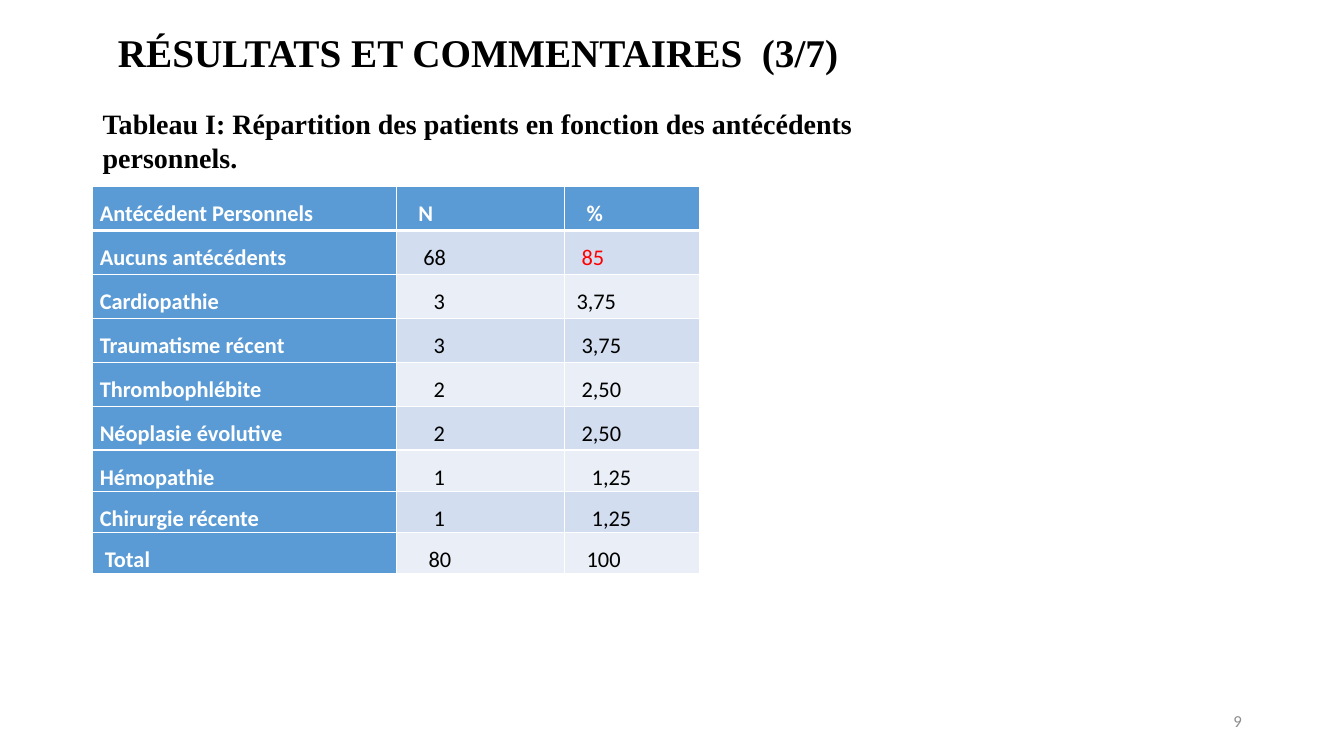
from dataclasses import dataclass

from lxml.etree import SubElement
from pptx import Presentation
from pptx.dml.color import RGBColor
from pptx.enum.text import MSO_ANCHOR as Anchor, MSO_AUTO_SIZE as AutoSize, PP_ALIGN as Align
from pptx.oxml.ns import qn
from pptx.util import Pt

WHITE, BLACK, RED, GREY = "FFFFFF", "000000", "FF0000", "8C8C8C"
BLUE, BAND_DARK, BAND_LIGHT = "5B9BD5", "D2DEEF", "EAEFF7"
SERIF, SANS = "Times New Roman", "Calibri"
INSET, INDENT_STEP = 5.04, 3.62
COLUMN_WIDTHS = (216.72, 120.24, 96.48)
TALL_ROW, SHORT_ROW, TALL_COUNT = 31.4, 26.64, 6


@dataclass(frozen=True)
class Entry:
    text: str
    indent: int = 0
    color: str = BLACK


@dataclass(frozen=True)
class Style:
    size: float
    font: str
    color: str
    bold: bool = False


ROWS = (
    (Entry("Antécédent Personnels"), Entry("N", 3), Entry("%", 3)),
    (Entry("Aucuns antécédents"), Entry("68", 4), Entry("85", 2, RED)),
    (Entry("Cardiopathie"), Entry("3", 6), Entry("3,75", 1)),
    (Entry("Traumatisme récent"), Entry("3", 6), Entry("3,75", 2)),
    (Entry("Thrombophlébite"), Entry("2", 6), Entry("2,50", 2)),
    (Entry("Néoplasie évolutive"), Entry("2", 6), Entry("2,50", 2)),
    (Entry("Hémopathie"), Entry("1", 6), Entry("1,25", 4)),
    (Entry("Chirurgie récente"), Entry("1", 6), Entry("1,25", 4)),
    (Entry("Total", 1), Entry("80", 5), Entry("100", 3)),
)


def rgb(value: str) -> RGBColor:
    return RGBColor.from_string(value)


def write(frame, text: str, style: Style):
    frame.text = text
    paragraph = frame.paragraphs[0]
    font = paragraph.font
    font.size, font.name, font.bold = Pt(style.size), style.font, style.bold
    font.color.rgb = rgb(style.color)
    return paragraph


def add_label(slide, box: tuple, text: str, style: Style, align: Align, anchor: Anchor) -> None:
    frame = slide.shapes.add_textbox(*map(Pt, box)).text_frame
    frame.word_wrap = True
    frame.vertical_anchor = anchor
    write(frame, text, style).alignment = align


def add_borders(cell, widths: dict) -> None:
    properties = cell._tc.get_or_add_tcPr()
    for position, (side, width) in enumerate(widths.items()):
        line = SubElement(properties, qn(f"a:ln{side}"), w=str(Pt(width)))
        SubElement(SubElement(line, qn("a:solidFill")), qn("a:srgbClr"), val=WHITE)
        properties.insert(position, line)


def fill_cell(cell, entry: Entry, row: int, column: int) -> None:
    heading = row == 0 or column == 0
    cell.margin_left = Pt(INSET + entry.indent * INDENT_STEP)
    cell.margin_right = Pt(INSET)
    cell.margin_top = cell.margin_bottom = 0
    cell.fill.solid()
    cell.fill.fore_color.rgb = rgb(BLUE if heading else BAND_DARK if row % 2 else BAND_LIGHT)
    style = Style(16, SANS, WHITE if heading else entry.color, heading)
    paragraph = write(cell.text_frame, entry.text, style)
    paragraph.line_spacing = 1.5
    tall = row < TALL_COUNT
    paragraph.space_before, paragraph.space_after = Pt(0 if tall else 6), Pt(8 if tall else 16)
    add_borders(cell, {"L": 1, "R": 1, "T": 3 if row == 1 else 1, "B": 3 if row == 0 else 1})


def add_history_table(slide) -> None:
    heights = [TALL_ROW if row < TALL_COUNT else SHORT_ROW for row in range(len(ROWS))]
    table = slide.shapes.add_table(
        len(ROWS), len(COLUMN_WIDTHS), Pt(66.24), Pt(133.2), Pt(sum(COLUMN_WIDTHS)), Pt(sum(heights))
    ).table
    table.first_col = True
    for column, width in zip(table.columns, COLUMN_WIDTHS):
        column.width = Pt(width)
    for row, (height, entries) in enumerate(zip(heights, ROWS)):
        table.rows[row].height = Pt(height)
        for column, entry in enumerate(entries):
            fill_cell(table.cell(row, column), entry, row, column)


def main() -> None:
    deck = Presentation()
    deck.slide_width, deck.slide_height = Pt(960), Pt(540)
    slide = deck.slides.add_slide(deck.slide_layouts[5])

    title = slide.shapes.title
    title.left, title.top, title.width, title.height = map(Pt, (77.04, 16.56, 570.96, 41.04))
    title.text_frame.auto_size = AutoSize.NONE
    title.text_frame.vertical_anchor = Anchor.TOP
    heading = write(title.text_frame, "RÉSULTATS ET COMMENTAIRES  (3/7)", Style(28, SERIF, BLACK, True))
    heading.alignment = Align.LEFT

    add_history_table(slide)
    add_label(
        slide, (66.24, 72.72, 631.44, 55.44),
        "Tableau I: Répartition des patients en fonction des antécédents personnels.",
        Style(20, SERIF, BLACK, True), Align.LEFT, Anchor.TOP,
    )
    add_label(slide, (678.24, 500.4, 216, 28.8), "9", Style(12, SANS, GREY), Align.RIGHT, Anchor.MIDDLE)
    deck.save("out.pptx")


if __name__ == "__main__":
    main()
